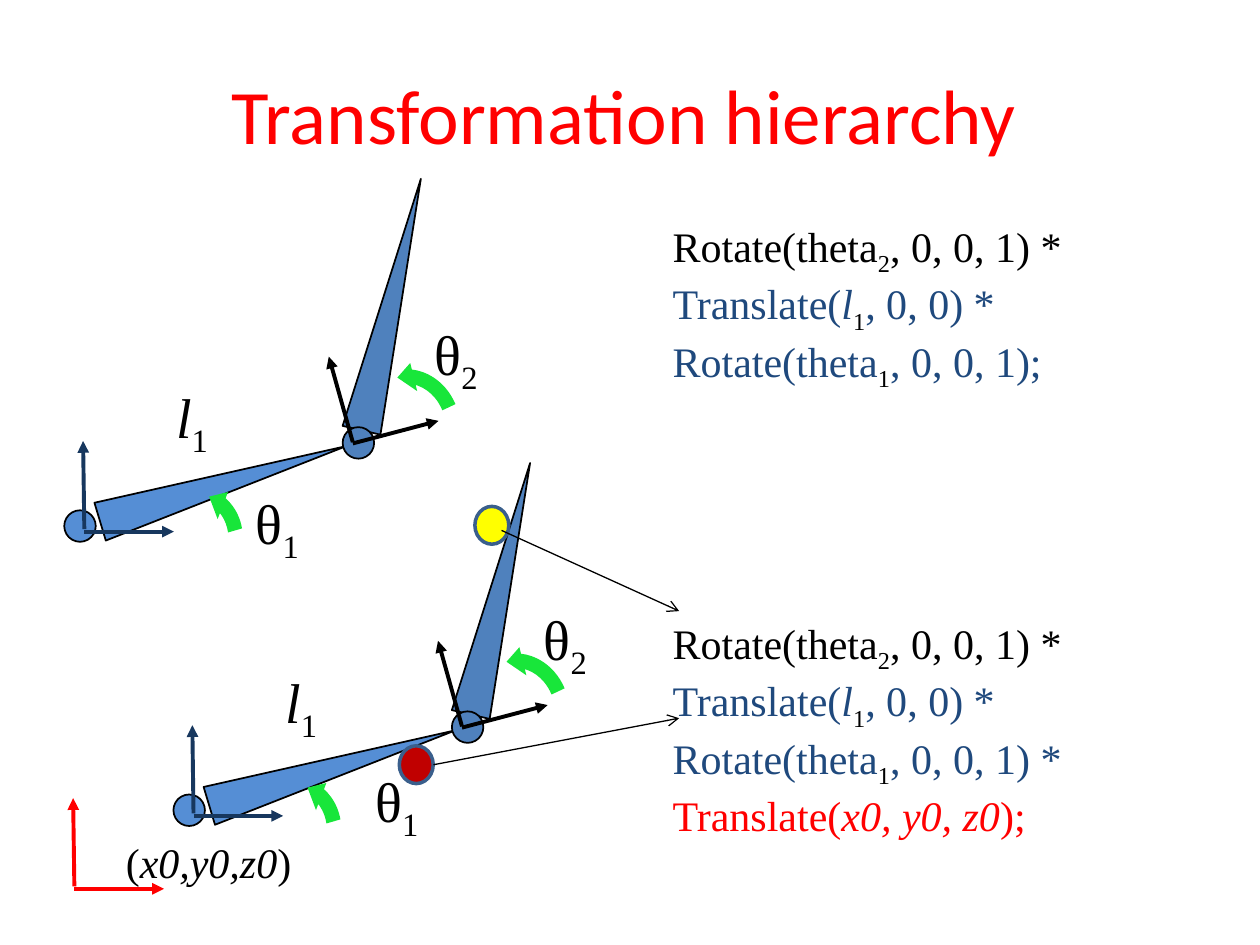
from lxml import etree
from pptx import Presentation
from pptx.dml.color import RGBColor
from pptx.enum.shapes import MSO_CONNECTOR, MSO_SHAPE
from pptx.enum.text import MSO_ANCHOR, MSO_AUTO_SIZE, PP_ALIGN
from pptx.oxml.ns import qn
from pptx.util import Pt

STRAIGHT = MSO_CONNECTOR.STRAIGHT
ELLIPSE = MSO_SHAPE.OVAL
CIRCULAR_ARROW = MSO_SHAPE.CIRCULAR_ARROW

COLOURS = {
    "black": "000000", "red": "FF0000", "navy": "17375E", "text_blue": "1F497D",
    "upper_arm": "558ED5", "forearm": "4F81BD", "green": "18E63A",
    "yellow": "FFFF00", "dark_red": "C00000", "dot_outline": "3A5F8C",
}
SERIF = "Times New Roman"
TITLE = "Transformation hierarchy"

# A run is (text, colour, style); style is "", "italic" or "sub".
L1 = [[("l", "black", "italic"), ("1", "black", "sub")]]
THETA_1 = [[("θ", "black", ""), ("1", "black", "sub")]]
THETA_2 = [[("θ", "black", ""), ("2", "black", "sub")]]
ORIGIN = [[("(", "black", ""), ("x0,y0,z0", "black", "italic"), (")", "black", "")]]


def rotate_line(index, colour, ending):
    return [("Rotate(theta", colour, ""), (index, "black", "sub"),
            (f", 0, 0, 1){ending}", colour, "")]


JOINT_LINES = [
    rotate_line("2", "black", " *"),
    [("Translate(", "text_blue", ""), ("l", "text_blue", "italic"),
     ("1", "black", "sub"), (", 0, 0) *", "text_blue", "")],
]
FIXED_BASE_CODE = JOINT_LINES + [rotate_line("1", "text_blue", ";")]
MOVED_BASE_CODE = JOINT_LINES + [
    rotate_line("1", "text_blue", " *"),
    [("Translate(", "red", ""), ("x0, y0, z0", "red", "italic"), (");", "red", "")],
]

# Arm geometry, placed for the fixed base; the other arm is shifted.
LINKS = [
    ("forearm", [(195.8, 243.4), (217.4, 248.4), (240.5, 102.2)]),
    ("upper_arm", [(54, 287.3), (60.5, 308.9), (198, 254.9)]),
]
JOINTS = [("upper_arm", 36.7, 291.6), ("forearm", 195.8, 244.1)]
BASE_AXES = [((48.2, 303.8), (99.4, 303.8)), ((48.2, 302.4), (47.5, 252))]
ELBOW_AXES = [((201.6, 253.4), (250.6, 240.5)), ((201.6, 252.7), (187.9, 203.8))]
ARMS = [
    {"shift": (0, 0), "theta_1": (139, 275.8), "base_arc": (72.7, 277.2)},
    {"shift": (62.4, 162.4), "theta_1": (207.4, 434.2), "base_arc": (128.9, 443.5)},
]
WORLD_SHIFT = (-5.7, 204.1)
DOTS = [("yellow", 271.4, 289.4), ("dark_red", 228.2, 426.2)]
POINTERS = [((286.6, 303.1), (388.1, 349.2)), ((247.7, 437), (388.1, 410.4))]


def rgb(name):
    return RGBColor.from_string(COLOURS[name])


def moved(point, shift):
    return point[0] + shift[0], point[1] + shift[1]


def paint(shape, fill, outline=None, width=1):
    shape.shadow.inherit = False
    shape.fill.solid()
    shape.fill.fore_color.rgb = rgb(fill)
    if outline:
        shape.line.color.rgb = rgb(outline)
        shape.line.width = Pt(width)
    else:
        shape.line.fill.background()


def add_shape(slide, kind, position, size):
    return slide.shapes.add_shape(kind, *map(Pt, (*position, *size)))


def add_link(slide, points, fill):
    start, *others = [(Pt(x), Pt(y)) for x, y in points]
    builder = slide.shapes.build_freeform(*start)
    builder.add_line_segments(others, close=True)
    paint(builder.convert_to_shape(), fill, "black")


def add_arrow(slide, start, end, colour, width=2.25, head="triangle"):
    connector = slide.shapes.add_connector(STRAIGHT, *map(Pt, (*start, *end)))
    connector.line.color.rgb = rgb(colour)
    connector.line.width = Pt(width)
    properties = connector._element.spPr
    etree.SubElement(properties.find(qn("a:ln")), qn("a:tailEnd"), type=head)
    etree.SubElement(properties, qn("a:effectLst"))


def add_axes(slide, axes, shift, colour):
    for start, end in axes:
        add_arrow(slide, moved(start, shift), moved(end, shift), colour)


def add_arc(slide, position, rotation, start_angle):
    """Add a mirrored curved arrow; the angle is in the shape's adjustment units."""
    arc = add_shape(slide, CIRCULAR_ARROW, position, (73.4, 66.2))
    for index, value in enumerate((0.125, 11.42, 204.58, start_angle, 0.125)):
        arc.adjustments[index] = value
    arc.rotation = rotation
    arc._element.spPr.find(qn("a:xfrm")).set("flipH", "1")
    paint(arc, "green")


def add_text(slide, lines, position, size, font_size):
    box = slide.shapes.add_textbox(*map(Pt, (*position, *size)))
    frame = box.text_frame
    frame.word_wrap = False
    frame.auto_size = MSO_AUTO_SIZE.SHAPE_TO_FIT_TEXT
    for number, line in enumerate(lines):
        paragraph = frame.add_paragraph() if number else frame.paragraphs[0]
        for text, colour, style in line:
            run = paragraph.add_run()
            run.text = text
            formats = {"name": SERIF, "size": Pt(font_size), "italic": style == "italic"}
            for attribute, value in formats.items():
                setattr(run.font, attribute, value)
            run.font.color.rgb = rgb(colour)
            if style == "sub":
                run._r.get_or_add_rPr().set("baseline", "-25000")


def add_arm(slide, arm):
    shift = arm["shift"]
    for fill, points in LINKS:
        add_link(slide, [moved(point, shift) for point in points], fill)
    for fill, left, top in JOINTS:
        joint = add_shape(slide, ELLIPSE, moved((left, top), shift), (18, 18))
        paint(joint, fill, "black")
    add_axes(slide, BASE_AXES, shift, "navy")
    add_axes(slide, ELBOW_AXES, shift, "black")
    add_arc(slide, moved((197.3, 210.2), shift), 76, 168.76)
    add_arc(slide, arm["base_arc"], 110.9, 184.26)
    add_text(slide, L1, moved((93.6, 215.3), shift), (33.8, 45.4), 32)
    add_text(slide, THETA_2, moved((241.2, 179.3), shift), (42.5, 46.1), 32)
    add_text(slide, THETA_1, arm["theta_1"], (42.5, 46.1), 32)


def add_title(slide):
    title = slide.shapes.title
    box = {"left": 19.4, "top": 20.2, "width": 674.6, "height": 90}
    for attribute, value in box.items():
        setattr(title, attribute, Pt(value))
    title.text_frame.text = TITLE
    title.text_frame.vertical_anchor = MSO_ANCHOR.MIDDLE
    paragraph = title.text_frame.paragraphs[0]
    paragraph.alignment = PP_ALIGN.CENTER
    font = paragraph.runs[0].font
    for attribute, value in {"name": "Calibri", "size": Pt(44)}.items():
        setattr(font, attribute, value)
    font.color.rgb = rgb("red")


def main():
    presentation = Presentation()
    presentation.slide_width, presentation.slide_height = Pt(720), Pt(540)
    slide = presentation.slides.add_slide(presentation.slide_layouts[5])
    add_title(slide)
    for arm in ARMS:
        add_arm(slide, arm)
    add_axes(slide, BASE_AXES, WORLD_SHIFT, "red")
    add_text(slide, FIXED_BASE_CODE, (377.3, 122.4), (244.1, 94.3), 24)
    add_text(slide, MOVED_BASE_CODE, (377.3, 349.2), (248.4, 152.6), 24)
    add_text(slide, ORIGIN, (64.8, 474.5), (111.6, 36.7), 24)
    for fill, left, top in DOTS:
        dot = add_shape(slide, ELLIPSE, (left, top), (19.4, 21.6))
        paint(dot, fill, "dot_outline", 2)
    for start, end in POINTERS:
        add_arrow(slide, start, end, "black", 0.75, "arrow")
    presentation.save("out.pptx")


if __name__ == "__main__":
    main()
